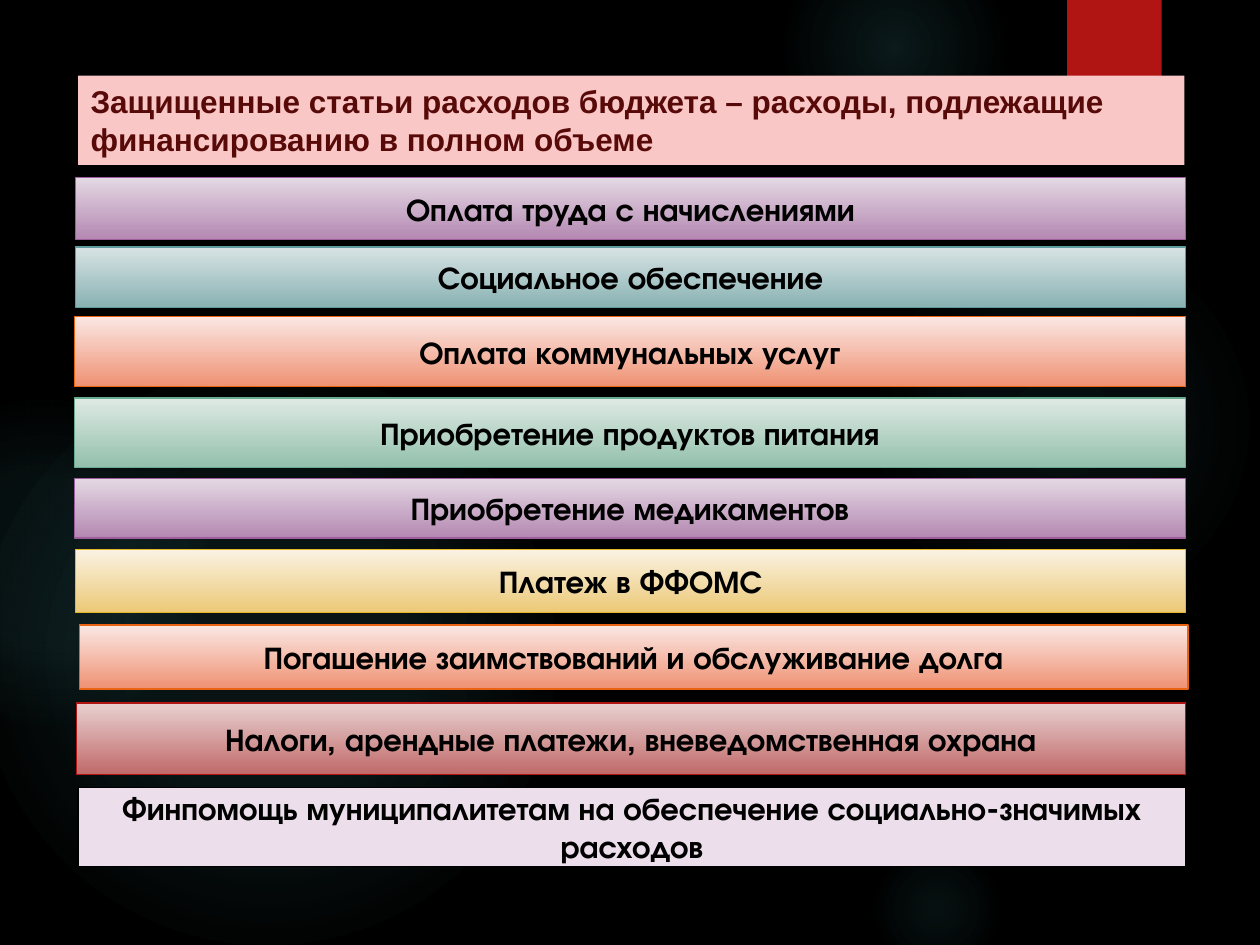
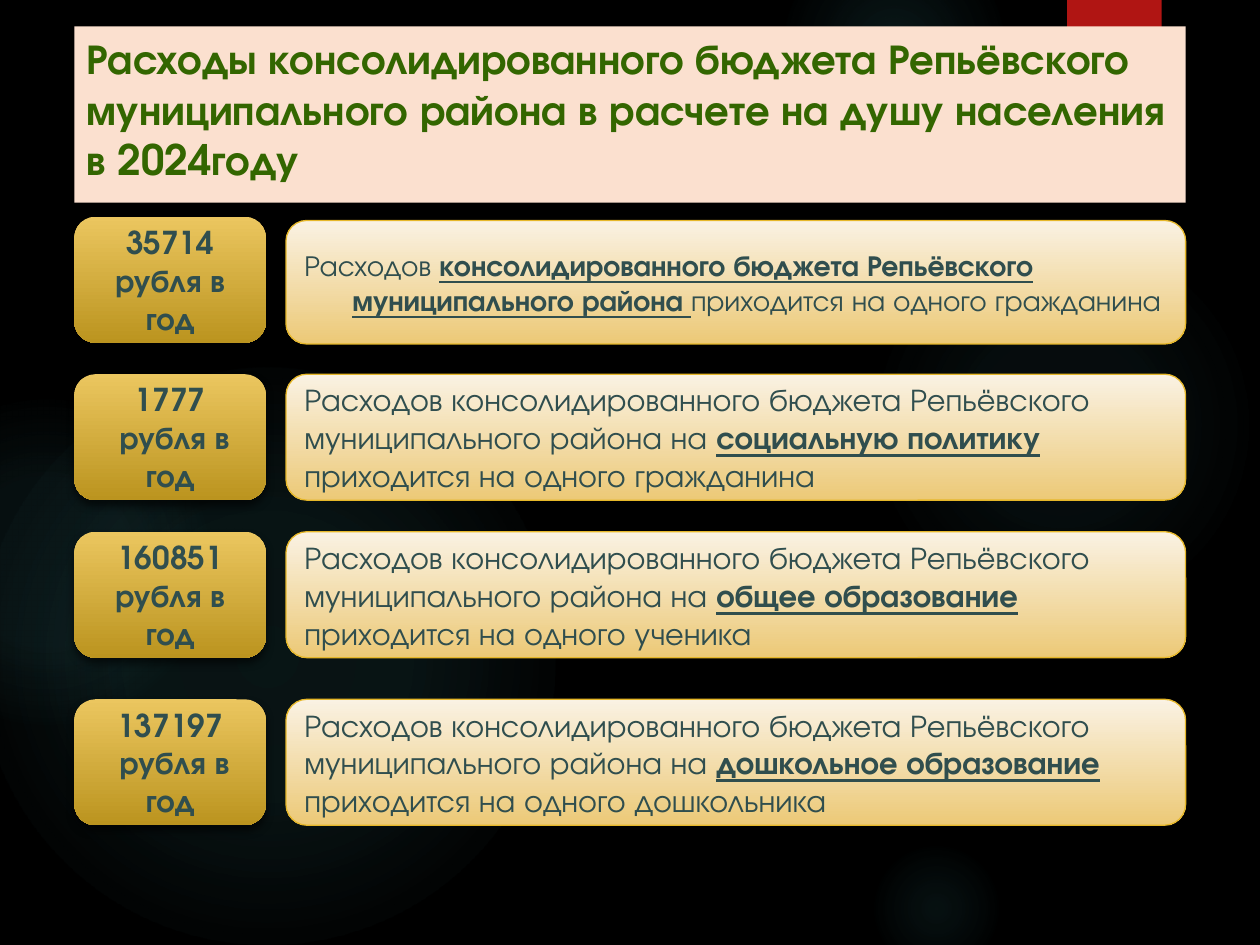
import dataclasses

import lxml.etree
import pptx
import pptx.dml.color
import pptx.enum.shapes
import pptx.enum.text
import pptx.oxml.ns
import pptx.util

Inches = pptx.util.Inches
Shape = pptx.enum.shapes.MSO_SHAPE
Align = pptx.enum.text.PP_ALIGN
Anchor = pptx.enum.text.MSO_ANCHOR
qn = pptx.oxml.ns.qn
color = pptx.dml.color.RGBColor.from_string


@dataclasses.dataclass(frozen=True)
class Theme:
    font: str = "TeX Gyre Adventor"
    heading_font: str = "Arial"
    text_size: float = 18
    small_size: float = 16.6
    heading_size: float = 24
    background: str = "000000"
    glow: str = "50B9C1"
    ribbon: str = "B01513"
    dark: str = "000000"
    slate: str = "304E4E"
    maroon: str = "580A09"
    green: str = "336600"
    pink: str = "F9C7C6"
    peach: str = "FBE0CF"
    # Panel fills: top colour, bottom colour, outline
    purple: tuple = ("E4D8E3", "B488B2", "9E5E9B")
    teal: tuple = ("D8E3E4", "89B2B3", "5F9C9D")
    orange: tuple = ("FBE8E4", "EF9173", "EA6312")
    mint: tuple = ("DEEAE4", "93C0AC", "6AAC90")
    yellow: tuple = ("FAF2E3", "ECC977", "E6B729")
    red: tuple = ("E8D1D0", "C06969", "B01513")
    lilac: tuple = ("ECDFEB", "ECDFEB", "000000")
    gold: tuple = ("EBC65F", "BB941F", None)


theme = Theme()


def add_panel(page, kind, place, fill, line=None, shadow=None, radial=False):
    """fill is a colour or a list of (percent, colour, opacity) stops;
    shadow is (opacity, blur, distance)."""
    panel = page.shapes.add_shape(kind, *[Inches(n) for n in place])
    panel.shadow.inherit = False
    properties = panel._element.spPr
    if isinstance(fill, str):
        panel.fill.solid()
        panel.fill.fore_color.rgb = color(fill)
    else:
        panel.fill.gradient()
        gradient = properties.find(qn("a:gradFill"))
        for child in list(gradient):
            gradient.remove(child)
        stops = lxml.etree.SubElement(gradient, qn("a:gsLst"))
        for percent, shade, opacity in fill:
            stop = lxml.etree.SubElement(stops, qn("a:gs"), pos=str(percent * 1000))
            tint = lxml.etree.SubElement(stop, qn("a:srgbClr"), val=shade)
            if opacity < 100:
                lxml.etree.SubElement(tint, qn("a:alpha"), val=str(opacity * 1000))
        if radial:
            route = lxml.etree.SubElement(gradient, qn("a:path"), path="circle")
            lxml.etree.SubElement(route, qn("a:fillToRect"),
                                  {side: "50000" for side in "ltrb"})
        else:
            lxml.etree.SubElement(gradient, qn("a:lin"), ang="5400000", scaled="0")
    if line:
        panel.line.color.rgb = color(line)
        panel.line.width = pptx.util.Pt(0.75)
    else:
        panel.line.fill.background()
    if shadow:
        opacity, blur, distance = shadow
        effect = lxml.etree.SubElement(
            properties.find(qn("a:effectLst")), qn("a:outerShdw"),
            blurRad=str(pptx.util.Pt(blur)), dist=str(pptx.util.Pt(distance)),
            dir="5400000", rotWithShape="0")
        tint = lxml.etree.SubElement(effect, qn("a:srgbClr"), val=theme.dark)
        lxml.etree.SubElement(tint, qn("a:alpha"), val=str(opacity * 1000))
    return panel


def write(box, paras, ink, size=theme.text_size, font=theme.font,
          align=Align.LEFT, anchor=Anchor.MIDDLE):
    """Each para is a list of (text, bold, underlined) runs."""
    frame = box.text_frame
    frame.word_wrap = True
    frame.vertical_anchor = anchor
    for number, runs in enumerate(paras):
        para = frame.add_paragraph() if number else frame.paragraphs[0]
        para.alignment = align
        for text, bold, underlined in runs:
            span = para.add_run()
            span.text = text
            span.font.name = font
            span.font.size = pptx.util.Pt(size)
            span.font.bold = bold
            span.font.underline = underlined
            span.font.color.rgb = color(ink)


deck = pptx.Presentation()
deck.slide_width = Inches(10)
deck.slide_height = Inches(7.5)

# Shared backdrop: glows as left, top, diameter and stops of (percent, opacity)
glows = [
    (6.89, 1.83, 3.08, [(0, 7), (36, 6), (69, 0)]),
    (6.22, -0.5, 1.75, [(0, 14), (36, 7), (73, 0)]),
    (6.89, 6.67, 1.08, [(0, 9), (36, 5), (66, 0)]),
    (-0.17, 2.92, 4.58, [(0, 11), (36, 10), (75, 0)]),
    (-0.92, 3.17, 2.58, [(0, 8), (36, 8), (72, 0)]),
]
# Titles: place, fill, text, ink, size, font
titles = [
    ((0.62, 0.6, 8.78, 0.71), theme.pink,
     "Защищенные статьи расходов бюджета – расходы, подлежащие "
     "финансированию в полном объеме",
     theme.maroon, theme.text_size, theme.heading_font),
    ((0.59, 0.21, 8.82, 1.4), theme.peach,
     "Расходы консолидированного бюджета Репьёвского муниципального района "
     "в расчете на душу населения в 2024году",
     theme.green, theme.heading_size, theme.font),
]
pages = []
for place, fill, text, ink, size, font in titles:
    page = deck.slides.add_slide(deck.slide_layouts[6])
    page.background.fill.solid()
    page.background.fill.fore_color.rgb = color(theme.background)
    for left, top, diameter, stops in glows:
        add_panel(page, Shape.OVAL, (left, top, diameter, diameter),
                  [(percent, theme.glow, opacity) for percent, opacity in stops],
                  radial=True)
    add_panel(page, Shape.RECTANGLE, (8.47, 0, 0.75, 1.2), theme.ribbon,
              shadow=(45, 3, 2))
    title = add_panel(page, Shape.RECTANGLE, place, fill)
    write(title, [[(text, True, False)]], ink, size, font, anchor=Anchor.TOP)
    pages.append(page)
protected_page, per_person_page = pages

# Slide 1: protected spending items
items = [
    ((0.6, 1.41, 8.81, 0.49), theme.purple, "Оплата труда с начислениями"),
    ((0.6, 1.96, 8.81, 0.48), theme.teal, "Социальное обеспечение"),
    ((0.59, 2.51, 8.82, 0.56), theme.orange, "Оплата коммунальных услуг"),
    ((0.59, 3.16, 8.82, 0.55), theme.mint, "Приобретение продуктов питания"),
    ((0.59, 3.8, 8.82, 0.47), theme.purple, "Приобретение медикаментов"),
    ((0.6, 4.36, 8.81, 0.5), theme.yellow, "Платеж в ФФОМС"),
    ((0.63, 4.96, 8.8, 0.51), theme.orange,
     "Погашение заимствований и обслуживание долга"),
    ((0.61, 5.58, 8.8, 0.57), theme.red,
     "Налоги, арендные платежи, вневедомственная охрана"),
    ((0.62, 6.25, 8.79, 0.63), theme.lilac,
     "Финпомощь муниципалитетам на обеспечение социально-значимых расходов"),
]
for place, (upper, lower, outline), text in items:
    fill = upper if upper == lower else [(0, upper, 100), (100, lower, 100)]
    bar = add_panel(protected_page, Shape.RECTANGLE, place, fill, outline)
    write(bar, [[(text, True, False)]], theme.dark, align=Align.CENTER)

# Slide 2: amount per person beside what it pays for
budget = "Расходов консолидированного бюджета Репьёвского муниципального района на "
# Rows: amount top, description top, description height, size, amount, runs
rows = [
    (1.72, 1.75, 0.98, theme.small_size, ["35714", "рубля в год"],
     ["Расходов ", "консолидированного бюджета Репьёвского муниципального района ",
      "приходится на одного гражданина"]),
    (2.97, 2.97, 1, theme.text_size, ["1777", " рубля в год"],
     [budget, "социальную политику ", "приходится на одного гражданина"]),
    (4.22, 4.22, 1, theme.text_size, ["160851 рубля в год"],
     [budget, "общее образование ", "приходится на одного ученика"]),
    (5.55, 5.55, 1, theme.text_size, ["137197", " рубля в год"],
     [budget, "дошкольное образование ", "приходится на одного дошкольника"]),
]
for amount_top, top, height, size, amount, (lead, topic, payee) in rows:
    upper, lower, outline = theme.yellow
    description = add_panel(per_person_page, Shape.ROUNDED_RECTANGLE,
                            (2.27, top, 7.14, height),
                            [(0, upper, 100), (100, lower, 100)], outline)
    write(description,
          [[(lead, False, False), (topic, True, True), (payee, False, False)]],
          theme.slate, size)
    if size == theme.small_size:
        # The first row has a hanging indent
        para = description.text_frame.paragraphs[0]
        para.space_before = pptx.util.Pt(10)
        indents = para._p.get_or_add_pPr()
        indents.set("marL", str(Inches(0.38)))
        indents.set("indent", str(-Inches(0.38)))

    upper, lower, outline = theme.gold
    badge = add_panel(per_person_page, Shape.ROUNDED_RECTANGLE,
                      (0.59, amount_top, 1.52, 1),
                      [(0, upper, 100), (100, lower, 100)], outline,
                      shadow=(60, 5, 3))
    write(badge, [[(text, True, False)] for text in amount], theme.slate,
          align=Align.CENTER)

deck.save("out.pptx")
